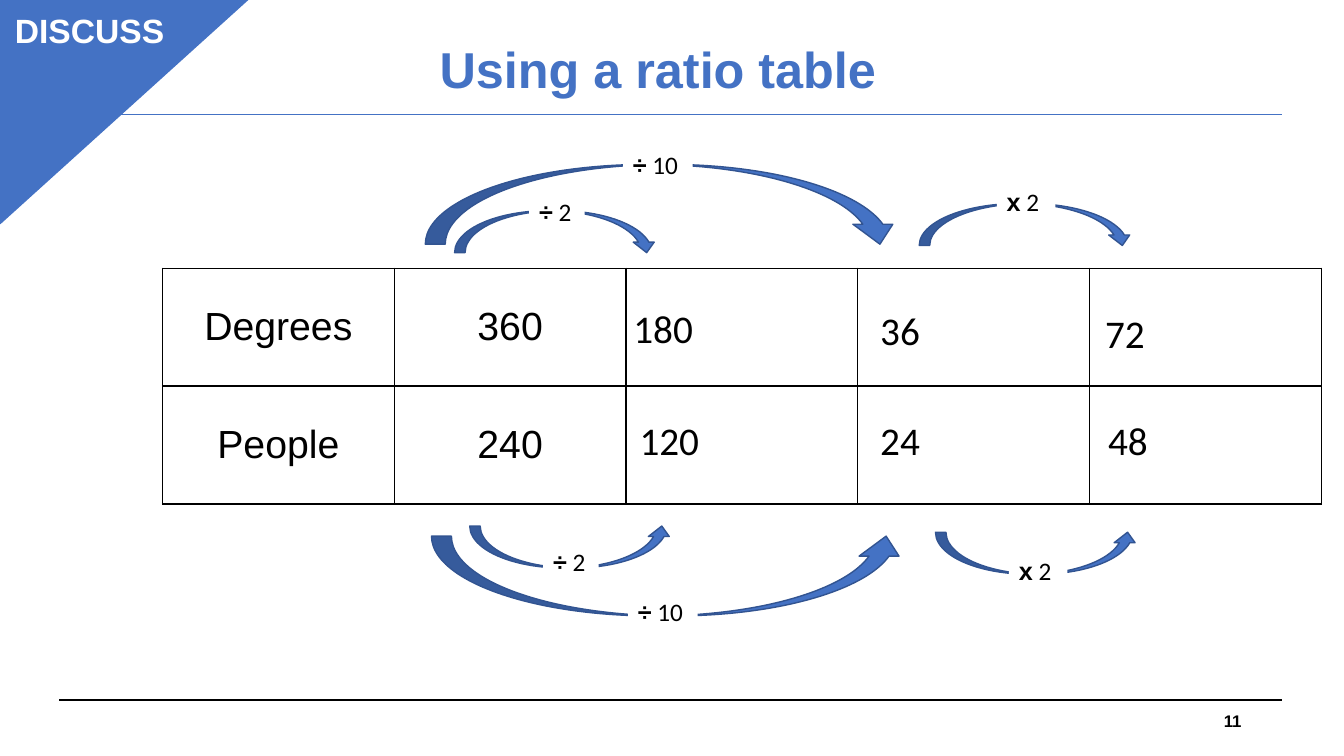
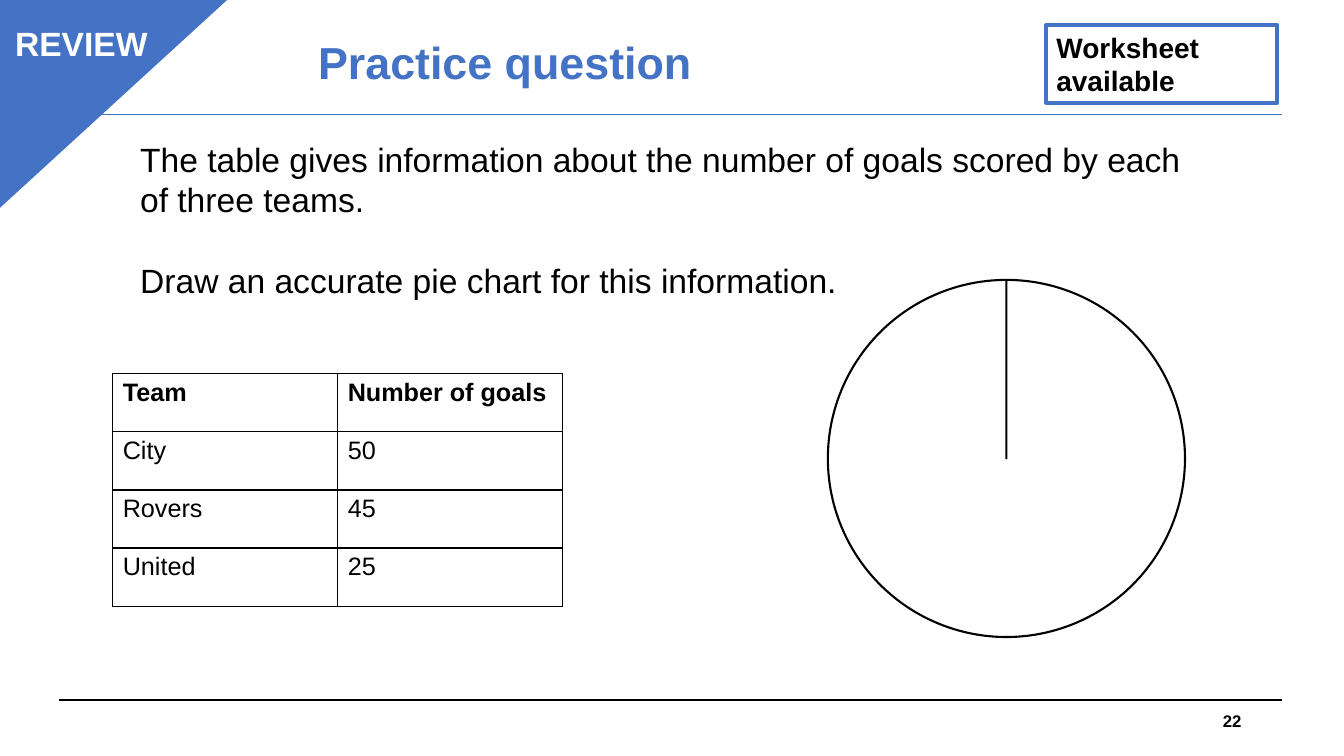
from lxml import etree
from pptx import Presentation
from pptx.chart.data import CategoryChartData
from pptx.dml.color import RGBColor
from pptx.enum.chart import XL_CHART_TYPE
from pptx.enum.shapes import MSO_CONNECTOR, MSO_SHAPE
from pptx.enum.text import MSO_ANCHOR, MSO_AUTO_SIZE, PP_ALIGN
from pptx.oxml.ns import qn
from pptx.util import Pt

LEFT, CENTER, RIGHT = PP_ALIGN.LEFT, PP_ALIGN.CENTER, PP_ALIGN.RIGHT
TOP, MIDDLE = MSO_ANCHOR.TOP, MSO_ANCHOR.MIDDLE
NO_AUTOFIT = MSO_AUTO_SIZE.NONE
STRAIGHT = MSO_CONNECTOR.STRAIGHT
ARC, TRIANGLE, RECTANGLE = (
    MSO_SHAPE.CURVED_DOWN_ARROW, MSO_SHAPE.ISOSCELES_TRIANGLE, MSO_SHAPE.RECTANGLE)
PIE = XL_CHART_TYPE.PIE

COLORS = {"blue": "4472C4", "edge": "325491", "black": "000000", "white": "FFFFFF",
          "orange": "ED7D31", "grey": "A5A5A5"}
HEADING, BODY = "Arial", "Calibri"
TITLE_ONLY = 5


def color(name):
    return RGBColor.from_string(COLORS[name])


def points(*lengths):
    return [Pt(length) for length in lengths]


# Text
def style(span, size, name="black", bold=False, font=HEADING):
    span.font.size = Pt(size)
    span.font.bold = bold
    span.font.name = font
    span.font.color.rgb = color(name)


def write(frame, text, size, name="black", bold=False, font=HEADING,
          align=LEFT, anchor=TOP):
    frame.text = text
    frame.word_wrap = True
    frame.auto_size = NO_AUTOFIT
    frame.vertical_anchor = anchor
    for para in frame.paragraphs:
        para.alignment = align
        for span in para.runs:
            style(span, size, name, bold, font)


def add_text(page, box, text, size, **options):
    frame = page.shapes.add_textbox(*points(*box)).text_frame
    write(frame, text, size, **options)
    return frame


# Shapes
def add_shape(page, kind, box, fill=None, line=None, width=1, flip=False):
    shape = page.shapes.add_shape(kind, *points(*box))
    shape.shadow.inherit = False
    if fill:
        shape.fill.solid()
        shape.fill.fore_color.rgb = color(fill)
    else:
        shape.fill.background()
    if line:
        shape.line.color.rgb = color(line)
        shape.line.width = Pt(width)
    else:
        shape.line.fill.background()
    if flip:
        shape._element.spPr.get_or_add_xfrm().set("flipV", "1")
    return shape


def add_rule(page, top, name, width):
    rule = page.shapes.add_connector(STRAIGHT, *points(42.5, top, 916, top))
    rule.line.color.rgb = color(name)
    rule.line.width = Pt(width)
    etree.SubElement(rule._element.spPr, qn("a:effectLst"))


# Tables
def outline_cell(cell):
    properties = cell._tc.get_or_add_tcPr()
    for position, side in enumerate(("a:lnL", "a:lnR", "a:lnT", "a:lnB")):
        border = etree.Element(qn(side), w=str(Pt(1)))
        fill = etree.SubElement(border, qn("a:solidFill"))
        etree.SubElement(fill, qn("a:srgbClr"), val=COLORS["black"])
        properties.insert(position, border)


def add_grid(page, box, rows, size, bold_header=False, align=LEFT, anchor=TOP):
    table = page.shapes.add_table(len(rows), len(rows[0]), *points(*box)).table
    table.first_row = table.horz_banding = False
    for row_index, row in enumerate(rows):
        for column_index, text in enumerate(row):
            cell = table.cell(row_index, column_index)
            cell.fill.background()
            outline_cell(cell)
            write(cell.text_frame, text, size, align=align,
                  bold=bold_header and row_index == 0)
            cell.vertical_anchor = anchor


# Parts that every slide has
def add_page(deck, title, title_box, title_size, title_align, number):
    page = deck.slides.add_slide(deck.slide_layouts[TITLE_ONLY])
    heading = page.shapes.title
    heading.left, heading.top, heading.width, heading.height = points(*title_box)
    write(heading.text_frame, title, title_size, "blue", True,
          align=title_align, anchor=MIDDLE)
    add_rule(page, 500, "black", 1.5)
    add_rule(page, 82, "blue", 0.75)
    add_text(page, (678, 500.4, 216, 29), number, 12, bold=True,
             align=RIGHT, anchor=MIDDLE)
    return page


def add_corner(page, box, label, label_box):
    corner = add_shape(page, TRIANGLE, box, "blue", "blue", flip=True)
    corner.adjustments[0] = 0
    add_text(page, label_box, label, 24, name="white", bold=True, align=CENTER)


# Curved arrow with its operation written on the crest
def add_step(page, box, sign, number, label_box, below):
    add_shape(page, ARC, box, "blue", "edge", flip=below)
    label = add_shape(page, RECTANGLE, label_box, "white")
    write(label.text_frame, sign, 18, bold=True)
    span = label.text_frame.paragraphs[0].add_run()
    span.text = f" {number}"
    style(span, 18, font=BODY)


def add_steps(page):
    small, wide = (144.7, 30), (339, 57)
    steps = [  # left, top, size, sign, number, label left, top and width, below
        (324.7, 150.5, small, "÷", 2, 378, 136.8, 39.6, False),
        (303.8, 117.4, wide, "÷", 10, 445, 103, 49.7, False),
        (656.6, 145.4, (152.6, 30), "x", 2, 712, 129.6, 41.8, False),
        (668.2, 380.2, small, "x", 2, 720.7, 393, 41.8, True),
        (308.2, 383, wide, "÷", 10, 448.6, 422.6, 49.7, True),
        (335.5, 375.8, small, "÷", 2, 388, 386.6, 39.6, True),
    ]
    for left, top, size, sign, number, label_left, label_top, width, below in steps:
        add_step(page, (left, top, *size), sign, number,
                 (label_left, label_top, width, 29), below)


def add_answers(page):
    answers = [("180", 417.6, 213.8), ("36", 586.8, 215.3), ("72", 747.4, 217.4),
               ("120", 422, 293.8), ("24", 586.8, 293.8), ("48", 749.5, 293.8)]
    for text, left, top in answers:
        add_text(page, (left, top, 112.3, 41), text, 28, font=BODY, align=CENTER)


# Empty pie with a single starting radius
def add_blank_pie(page, box):
    data = CategoryChartData()
    data.categories = ["1", "2", "3", "4"]
    data.add_series("Series 1", (0, 0, 0, 100))
    chart = page.shapes.add_chart(PIE, *points(*box), data).chart
    chart.has_legend = chart.has_title = False
    chart.font.size = Pt(10)
    chart.font.name = BODY
    chart.font.color.rgb = color("black")
    plot = chart.plots[0]
    plot.vary_by_categories = True
    for index, name in enumerate(("blue", "orange", "grey", None)):
        part = plot.series[0].points[index].format
        if name:
            part.fill.solid()
            part.fill.fore_color.rgb = color(name)
        else:
            part.fill.background()
        part.line.color.rgb = color("black")
        part.line.width = Pt(1.5)


def build_ratio_slide(deck):
    page = add_page(deck, "Using a ratio table", (56, 25, 828, 48), 36, CENTER, "11")
    rows = [["Degrees", "360", "", "", ""], ["People", "240", "", "", ""]]
    add_grid(page, (116, 191.5, 828, 168.5), rows, 28, align=CENTER, anchor=MIDDLE)
    add_steps(page)
    add_answers(page)
    add_corner(page, (0, -3.6, 180.7, 163.4), "DISCUSS", (0, 3.6, 128, 36))


def build_practice_slide(deck):
    page = add_page(deck, "Practice question", (220, 21, 482, 46), 32, LEFT, "22")
    add_corner(page, (-2, -1.4, 165, 151), "REVIEW", (-1.4, 13, 119, 36))
    notice = add_shape(page, RECTANGLE, (747.4, 18, 165, 55.4), line="blue", width=3)
    write(notice.text_frame, "Worksheet\vavailable", 20, bold=True)
    add_blank_pie(page, (493.2, 190, 451.4, 275))
    task = add_text(
        page, (93, 95.8, 774, 124),
        "The table gives information about the number of goals scored by each of "
        "three teams.\nDraw an accurate pie chart for this information.", 24)
    task.paragraphs[1].space_before = Pt(29)
    rows = [["Team", "Number of goals"], ["City", "50"], ["Rovers", "45"], ["United", "25"]]
    add_grid(page, (80.5, 267, 321.4, 166), rows, 18, bold_header=True)


def main():
    deck = Presentation()
    deck.slide_width, deck.slide_height = points(960, 540)
    build_ratio_slide(deck)
    build_practice_slide(deck)
    deck.save("out.pptx")


if __name__ == "__main__":
    main()
